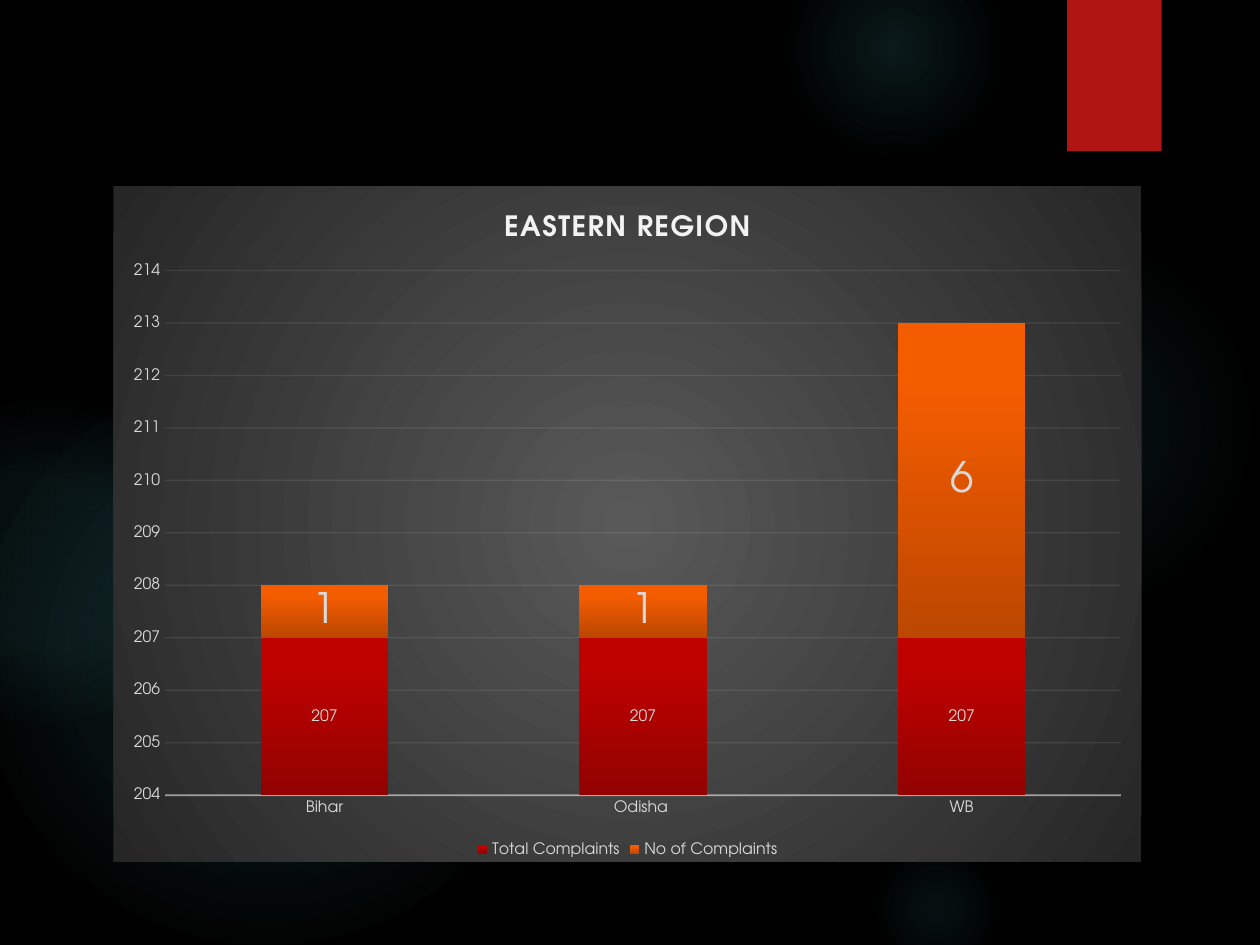
from lxml import etree
from pptx import Presentation
from pptx.chart.data import CategoryChartData
from pptx.dml.color import RGBColor
from pptx.enum.chart import XL_CHART_TYPE, XL_LABEL_POSITION, XL_LEGEND_POSITION, XL_TICK_MARK
from pptx.enum.shapes import MSO_SHAPE
from pptx.oxml import parse_xml
from pptx.oxml.ns import qn
from pptx.util import Inches, Pt

STACKED = XL_CHART_TYPE.COLUMN_STACKED
CENTER = XL_LABEL_POSITION.CENTER
BOTTOM = XL_LEGEND_POSITION.BOTTOM
NO_TICK = XL_TICK_MARK.NONE
OVAL = MSO_SHAPE.OVAL
RECTANGLE = MSO_SHAPE.RECTANGLE

FONT = "TeX Gyre Adventor"
COLORS = {"background": "000000", "glow": "50B9C1", "tab": "B01513", "title": "F2F2F2",
          "line": "F2F2F2", "text": "D9D9D9", "panel_inner": "595959", "panel_outer": "262626"}
DRAWING_NS = "http://schemas.openxmlformats.org/drawingml/2006/main"
CHART_NS = "http://schemas.openxmlformats.org/drawingml/2006/chart"

# left, top, diameter, then (position, opacity) stops in percent
GLOWS = [
    (6.89, 1.83, 3.08, [(0, 7), (36, 6), (69, 0)]),
    (6.22, -0.5, 1.75, [(0, 14), (36, 7), (73, 0)]),
    (6.89, 6.67, 1.08, [(0, 9), (36, 5), (66, 0)]),
    (-0.17, 2.92, 4.58, [(0, 11), (36, 10), (75, 0)]),
    (-0.92, 3.17, 2.58, [(0, 8), (36, 8), (72, 0)]),
]
REGIONS = ["Bihar", "Odisha ", "WB"]
# name, values, label size, gradient from bottom to top
SERIES = [
    ("Total Complaints", [207, 207, 207], 9, [(0, "920200"), (80, "BD0200"), (100, "BE0200")]),
    ("No of Complaints", [1, 1, 6], 24, [(0, "BC4700"), (80, "F45C00"), (100, "F55C00")]),
]


def rgb(name):
    return RGBColor.from_string(COLORS[name])


def gradient(stops, angle=None):
    """Gradient of (position, hex, opacity) stops; circular without an angle."""
    stop_xml = "".join(
        f'<a:gs pos="{position * 1000}"><a:srgbClr val="{color}">'
        f'<a:alpha val="{opacity * 1000}"/></a:srgbClr></a:gs>'
        for position, color, opacity in stops)
    if angle is None:
        direction = ('<a:path path="circle"><a:fillToRect l="50000" t="50000" '
                     'r="50000" b="50000"/></a:path>')
    else:
        direction = f'<a:lin ang="{angle * 60000}" scaled="0"/>'
    return parse_xml(f'<a:gradFill xmlns:a="{DRAWING_NS}" rotWithShape="1">'
                     f'<a:gsLst>{stop_xml}</a:gsLst>{direction}</a:gradFill>')


def replace_solid(properties, fill):
    solid = properties.find(qn("a:solidFill"))
    properties.replace(solid, fill)


def set_line(line, width, opacity):
    line.color.rgb = rgb("line")
    line.width = Pt(width)
    color = line._get_or_add_ln().find(f".//{qn('a:srgbClr')}")
    etree.SubElement(color, qn("a:alpha")).set("val", str(opacity * 1000))


def set_font(font, size, color="text", bold=False):
    font.name = FONT
    font.size = Pt(size)
    font.bold = bold
    font.color.rgb = rgb(color)


def add_plain_shape(page, kind, color, left, top, width, height):
    shape = page.shapes.add_shape(kind, Inches(left), Inches(top), Inches(width), Inches(height))
    shape.shadow.inherit = False
    shape.line.fill.background()
    shape.fill.solid()
    shape.fill.fore_color.rgb = rgb(color)
    return shape


def add_backdrop(page):
    page.background.fill.solid()
    page.background.fill.fore_color.rgb = rgb("background")
    for left, top, size, stops in GLOWS:
        glow = add_plain_shape(page, OVAL, "glow", left, top, size, size)
        colored = [(position, COLORS["glow"], opacity) for position, opacity in stops]
        replace_solid(glow._element.spPr, gradient(colored))
    add_plain_shape(page, RECTANGLE, "tab", 8.47, 0, 0.75, 1.2)


def format_axes(chart):
    for axis in (chart.category_axis, chart.value_axis):
        axis.major_tick_mark = NO_TICK
        axis.minor_tick_mark = NO_TICK
        set_font(axis.tick_labels.font, 9)
    set_line(chart.category_axis.format.line, 1, 54)
    values = chart.value_axis
    values.minimum_scale, values.maximum_scale, values.major_unit = 204, 214, 1
    values.format.line.fill.background()
    set_line(values.major_gridlines.format.line, 0.75, 10)


def format_series(plot):
    plot.gap_width = 150
    plot.overlap = 100
    plot.vary_by_categories = False
    for series, (_, _, label_size, stops) in zip(plot.series, SERIES):
        series.format.fill.solid()
        series.invert_if_negative = False
        opaque = [(position, color, 100) for position, color in stops]
        replace_solid(series._element.spPr, gradient(opaque, angle=270))
        labels = series.data_labels
        labels.show_value = True
        labels.position = CENTER
        set_font(labels.font, label_size)


def add_complaints_chart(page, left, top, width, height):
    data = CategoryChartData()
    data.categories = REGIONS
    for name, values, _, _ in SERIES:
        data.add_series(name, values)
    chart = page.shapes.add_chart(STACKED, Inches(left), Inches(top),
                                  Inches(width), Inches(height), data).chart
    set_font(chart.font, 10)

    # Panel behind the plot
    panel = parse_xml(f'<c:spPr xmlns:c="{CHART_NS}"/>')
    panel.append(gradient([(0, COLORS["panel_inner"], 100), (100, COLORS["panel_outer"], 100)]))
    etree.SubElement(etree.SubElement(panel, qn("a:ln")), qn("a:noFill"))
    chart.element.find(qn("c:chart")).addnext(panel)

    # Title
    chart.has_title = True
    chart.chart_title.include_in_layout = False
    span = chart.chart_title.text_frame.paragraphs[0].add_run()
    span.text = "EASTERN REGION"
    set_font(span.font, 16, "title", bold=True)
    span.font._element.set("spc", "100")

    # Legend
    chart.has_legend = True
    chart.legend.position = BOTTOM
    chart.legend.include_in_layout = False
    set_font(chart.legend.font, 9)

    format_axes(chart)
    format_series(chart.plots[0])


def main():
    deck = Presentation()
    deck.slide_width, deck.slide_height = Inches(10), Inches(7.5)
    page = deck.slides.add_slide(deck.slide_layouts.get_by_name("Blank"))
    add_backdrop(page)
    add_complaints_chart(page, 0.9, 1.48, 8.16, 5.36)
    deck.save("out.pptx")


if __name__ == "__main__":
    main()
